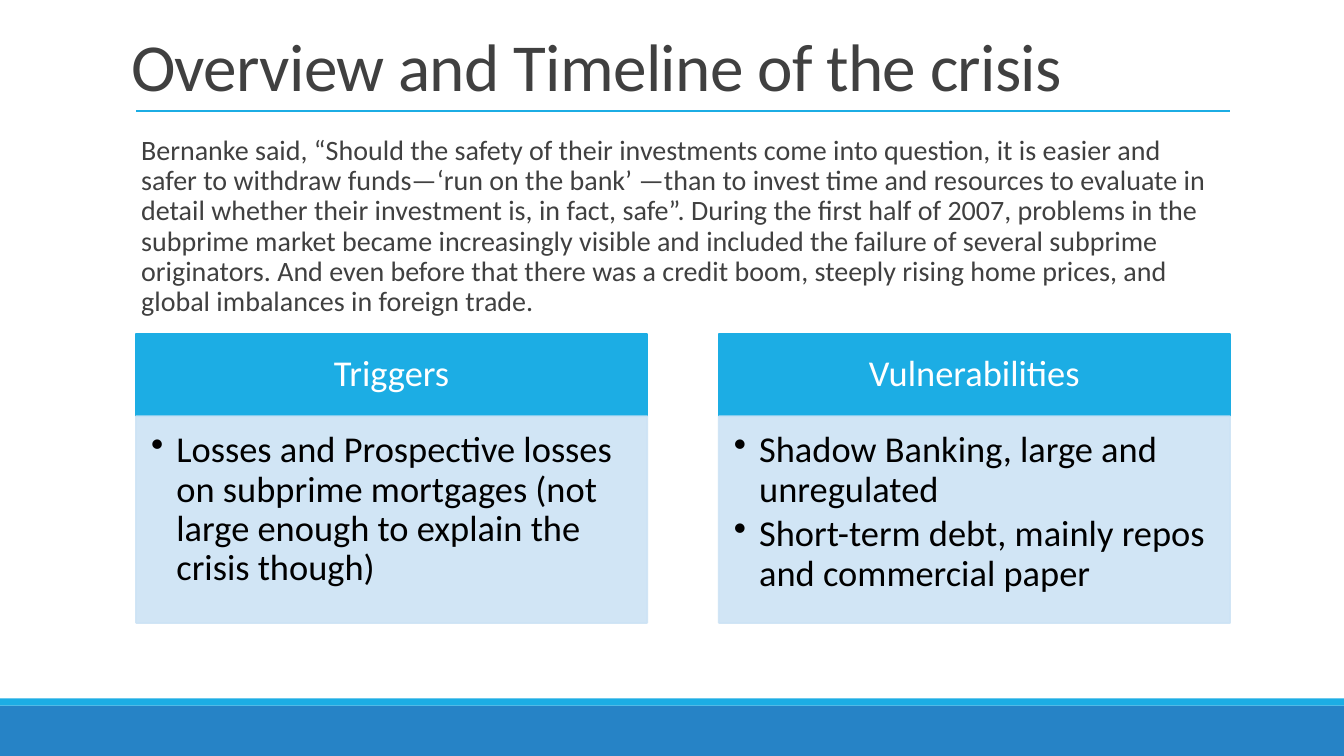
import pptx
import pptx.util
import pptx.dml.color
import pptx.enum.shapes
import pptx.enum.text
import pptx.oxml
import pptx.oxml.ns
from dataclasses import dataclass

Inches, Pt = pptx.util.Inches, pptx.util.Pt
Align = pptx.enum.text.PP_ALIGN
Anchor = pptx.enum.text.MSO_ANCHOR
RECTANGLE = pptx.enum.shapes.MSO_SHAPE.RECTANGLE

# Content
HEADING = "Overview and Timeline of the crisis"
SUMMARY = (
    "Bernanke said, “Should the safety of their investments come into question, "
    "it is easier and safer to withdraw funds—‘run on the bank’ —than to invest "
    "time and resources to evaluate in detail whether their investment is, in "
    "fact, safe”. During the first half of 2007, problems in the subprime market "
    "became increasingly visible and included the failure of several subprime "
    "originators. And even before that there was a credit boom, steeply rising "
    "home prices, and global imbalances in foreign trade."
)
CAUSES = [
    ("Triggers", [
        "Losses and Prospective losses on subprime mortgages "
        "(not large enough to explain the crisis though)",
    ]),
    ("Vulnerabilities", [
        "Shadow Banking, large and unregulated",
        "Short-term debt, mainly repos and commercial paper",
    ]),
]


@dataclass(frozen=True)
class Theme:
    font: str = "Calibri"
    accent: str = "1CADE4"
    footer: str = "2683C6"
    panel: str = "CDE3F5"
    ink: str = "404040"
    black: str = "000000"
    white: str = "FFFFFF"
    title_size: int = 48
    summary_size: int = 20
    panel_size: int = 26


THEME = Theme()

# Layout, in inches
SLIDE_W, SLIDE_H = 13.33, 7.5
LEFT, RIGHT = 1.35, 12.2
PANEL_W, PANEL_TOP, HEAD_H, LIST_H = 5.07, 3.31, 0.82, 2.05
PANEL_STEP = (RIGHT - LEFT - PANEL_W) / (len(CAUSES) - 1)
FOOTER_H, STRIPE_H = 0.5, 0.07


def rgb(value):
    return pptx.dml.color.RGBColor.from_string(value)


def apply(target, values):
    for name, value in values.items():
        setattr(target, name, value)


def place(shape, left, top, width, height):
    box = dict(left=left, top=top, width=width, height=height)
    apply(shape, {name: Inches(value) for name, value in box.items()})


def write(shape, lines, size, color, paragraph_format, anchor=Anchor.TOP,
          insets=(0.1, 0.05, 0.1, 0.05)):
    frame = shape.text_frame
    frame.text = "\n".join(lines)
    sides = ("margin_left", "margin_top", "margin_right", "margin_bottom")
    apply(frame, dict(zip(sides, map(Inches, insets))))
    apply(frame, dict(word_wrap=True, vertical_anchor=anchor,
                      auto_size=pptx.enum.text.MSO_AUTO_SIZE.NONE))
    for paragraph in frame.paragraphs:
        apply(paragraph, paragraph_format)
        for run in paragraph.runs:
            apply(run.font, dict(name=THEME.font, size=Pt(size)))
            run.font.color.rgb = rgb(color)
    return frame.paragraphs


def add_bullets(paragraphs, char, indent, color):
    namespace = pptx.oxml.ns.nsdecls("a")
    for paragraph in paragraphs:
        properties = paragraph._p.get_or_add_pPr()
        properties.set("marL", str(Inches(indent)))
        properties.set("indent", str(-Inches(indent)))
        for xml in (f'<a:buClr {namespace}><a:srgbClr val="{color}"/></a:buClr>',
                    f'<a:buChar {namespace} char="{char}"/>'):
            properties.append(pptx.oxml.parse_xml(xml))


def add_block(slide, left, top, width, height, fill, outlined=False, opacity=100):
    block = slide.shapes.add_shape(RECTANGLE, 0, 0, 0, 0)
    place(block, left, top, width, height)
    block.shadow.inherit = False
    block.fill.solid()
    block.fill.fore_color.rgb = rgb(fill)
    if outlined:
        block.line.color.rgb = rgb(fill)
        block.line.width = Pt(1.25)
    else:
        block.line.fill.background()
    if opacity < 100:
        for color in block._element.spPr.iter(pptx.oxml.ns.qn("a:srgbClr")):
            alpha = color.makeelement(pptx.oxml.ns.qn("a:alpha"),
                                      {"val": str(opacity * 1000)})
            color.append(alpha)
    return block


def main():
    deck = pptx.Presentation()
    apply(deck, dict(slide_width=Inches(SLIDE_W), slide_height=Inches(SLIDE_H)))
    slide = deck.slides.add_slide(deck.slide_layouts[1])

    # Footer bands
    footer_top = SLIDE_H - FOOTER_H
    add_block(slide, 0, footer_top, SLIDE_W, FOOTER_H, THEME.footer)
    add_block(slide, 0, footer_top - STRIPE_H, SLIDE_W, STRIPE_H, THEME.accent)

    # Title
    title = slide.shapes.title
    place(title, 1.2, 0.31, 11, 0.99)
    heading = write(title, [HEADING], THEME.title_size, THEME.ink,
                    dict(alignment=Align.LEFT, line_spacing=0.85))
    heading[0].runs[0].font._element.set("spc", "-50")

    # Summary
    summary = slide.placeholders[1]
    place(summary, 1.2, 1.3, 11, 5.11)
    quote = write(summary, [SUMMARY], THEME.summary_size, THEME.ink,
                  dict(alignment=Align.LEFT, line_spacing=0.9,
                       space_before=Pt(12), space_after=Pt(2)))
    add_bullets(quote, " ", 0.1, THEME.accent)

    # Cause panels
    for index, (cause, points) in enumerate(CAUSES):
        left = LEFT + index * PANEL_STEP
        head = add_block(slide, left, PANEL_TOP, PANEL_W, HEAD_H,
                         THEME.accent, outlined=True)
        write(head, [cause], THEME.panel_size, THEME.white,
              dict(alignment=Align.CENTER, line_spacing=0.9),
              Anchor.MIDDLE, (0.2, 0.12, 0.2, 0.12))
        panel = add_block(slide, left, PANEL_TOP + HEAD_H, PANEL_W, LIST_H,
                          THEME.panel, outlined=True, opacity=90)
        items = write(panel, points, THEME.panel_size, THEME.black,
                      dict(alignment=Align.LEFT, line_spacing=0.9,
                           space_after=Pt(3.9)),
                      insets=(0.15, 0.15, 0.2, 0.23))
        add_bullets(items, "•", 0.25, THEME.black)

    # Rule under the title
    rule = slide.shapes.add_connector(
        pptx.enum.shapes.MSO_CONNECTOR.STRAIGHT,
        Inches(LEFT), Inches(1.1), Inches(RIGHT), Inches(1.1))
    rule.line.color.rgb = rgb(THEME.accent)
    rule.line.width = Pt(1)
    rule_properties = rule._element.spPr
    rule_properties.append(
        rule_properties.makeelement(pptx.oxml.ns.qn("a:effectLst"), {}))

    deck.save("out.pptx")


if __name__ == "__main__":
    main()
